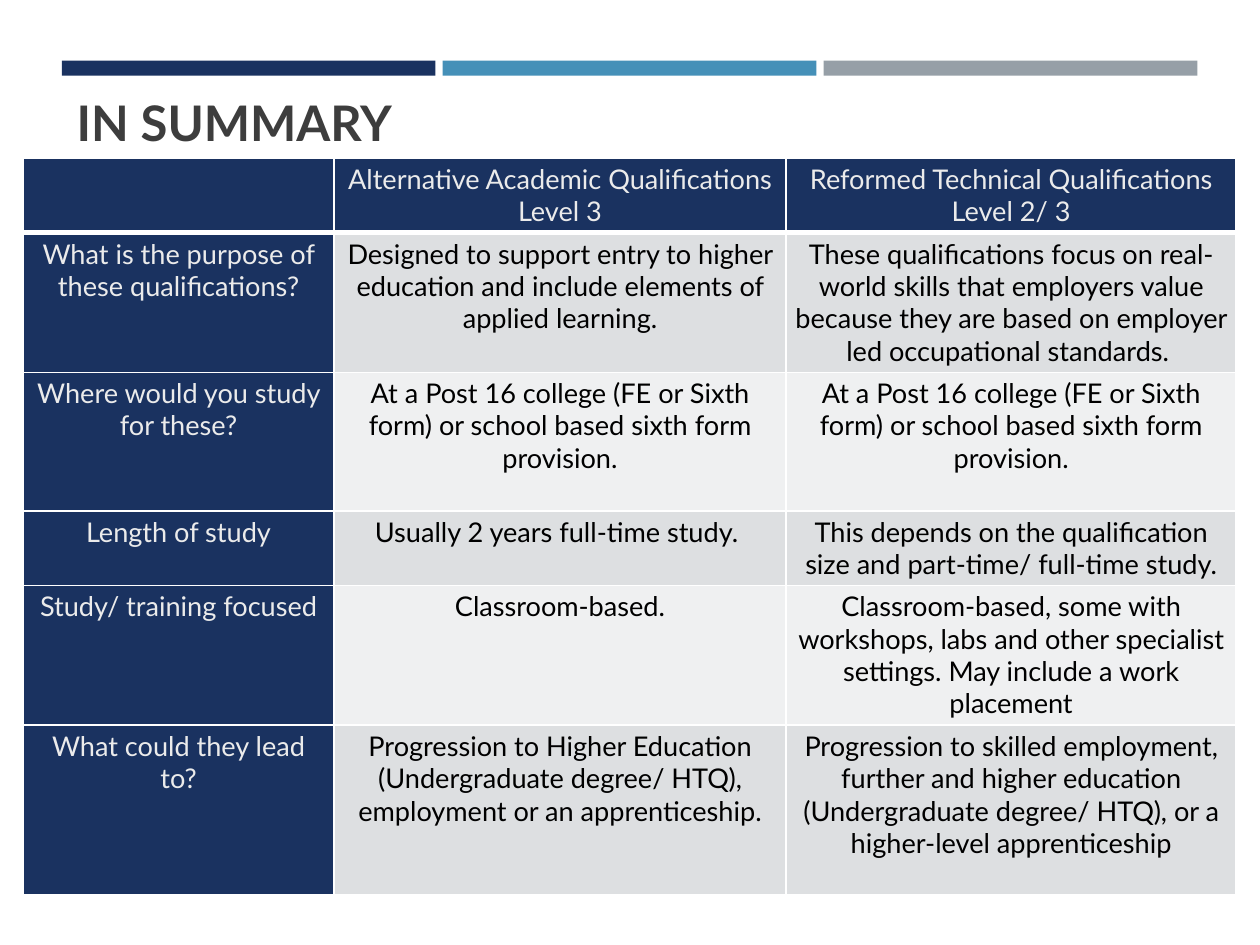
from dataclasses import dataclass

from pptx import Presentation
from pptx.dml.color import RGBColor
from pptx.enum.shapes import MSO_SHAPE as Shape
from pptx.enum.text import MSO_ANCHOR as Anchor, PP_ALIGN as Align
from pptx.oxml import parse_xml
from pptx.oxml.ns import nsdecls
from pptx.util import Pt

# Content
TITLE = "IN SUMMARY"
HEADER = [
    [],
    ["Alternative Academic Qualifications", "Level 3"],
    ["Reformed Technical Qualifications", "Level 2/ 3"],
]
COLLEGE = "At a Post 16 college (FE or Sixth form) or school based sixth form provision."
QUESTIONS = [
    ("What is the purpose of these qualifications?",
     "Designed to support entry to higher education and include elements of "
     "applied learning.",
     "These qualifications focus on real-world skills that employers value because "
     "they are based on employer led occupational standards. "),
    ("Where would you study for these?", COLLEGE, COLLEGE),
    ("Length of study",
     "Usually 2 years full-time study. ",
     "This depends on the qualification size and part-time/ full-time study."),
    ("Study/ training focused",
     "Classroom-based.",
     "Classroom-based, some with workshops, labs and other specialist settings. "
     "May include a work placement"),
    ("What could they lead to?",
     "Progression to Higher Education (Undergraduate degree/ HTQ), employment or "
     "an apprenticeship.",
     "Progression to skilled employment, further and higher education "
     "(Undergraduate degree/ HTQ), or a higher-level apprenticeship"),
]


@dataclass(frozen=True)
class Theme:
    font: str = "Lato"
    title_size: float = 28
    table_size: float = 15.5
    title: str = "3D3D3D"
    navy: str = "1A3260"
    blue: str = "4590B8"
    grey: str = "969FA7"
    light_text: str = "EBEBEB"
    dark_text: str = "000000"
    bands: tuple = ("DDDFE1", "EFF0F1")
    border: str = "FFFFFF"


THEME = Theme()

# Layout, in points
BAR_LEFT, BAR_TOP, BAR_WIDTH, BAR_HEIGHT, BAR_GAP = 35.3, 34.7, 213.6, 8.5, 4.1
TABLE_LEFT, TABLE_TOP = 13.2, 90.3
COLUMN_WIDTHS = [177.6, 258.4, 257.2]
ROW_HEIGHTS = [42.4, 79.4, 79.2, 42.4, 79.4, 97]


def add_run(paragraph, text, size, color, bold=False):
    run = paragraph.add_run()
    run.text = text
    run.font.name = THEME.font
    run.font.size = Pt(size)
    run.font.bold = bold
    run.font.color.rgb = RGBColor.from_string(color)


def set_borders(cell, widths):
    properties = cell._tc.get_or_add_tcPr()
    for position, (side, width) in enumerate(widths.items()):
        properties.insert(position, parse_xml(
            f'<a:{side} {nsdecls("a")} w="{Pt(width)}"><a:solidFill>'
            f'<a:srgbClr val="{THEME.border}"/></a:solidFill></a:{side}>'))


def fill_cell(cell, lines, fill, text_color, bottom_border):
    cell.fill.solid()
    cell.fill.fore_color.rgb = RGBColor.from_string(fill)
    cell.margin_left = cell.margin_right = Pt(5)
    cell.margin_top = cell.margin_bottom = Pt(2.7)
    for number, line in enumerate(lines):
        frame = cell.text_frame
        paragraph = frame.add_paragraph() if number else frame.paragraphs[0]
        paragraph.alignment = Align.CENTER
        add_run(paragraph, line, THEME.table_size, text_color)
    set_borders(cell, {"lnL": 1, "lnR": 1, "lnT": 1, "lnB": bottom_border})


def add_bars(slide):
    for number, color in enumerate((THEME.navy, THEME.blue, THEME.grey)):
        left = BAR_LEFT + number * (BAR_WIDTH + BAR_GAP)
        bar = slide.shapes.add_shape(Shape.RECTANGLE, Pt(left), Pt(BAR_TOP),
                                     Pt(BAR_WIDTH), Pt(BAR_HEIGHT))
        bar.shadow.inherit = False
        bar.fill.solid()
        bar.fill.fore_color.rgb = RGBColor.from_string(color)
        bar.line.fill.background()


def add_title(slide):
    box = slide.shapes.add_textbox(Pt(36.7), Pt(5), Pt(629.3), Pt(85))
    frame = box.text_frame
    frame.word_wrap = True
    frame.vertical_anchor = Anchor.BOTTOM
    add_run(frame.paragraphs[0], TITLE, THEME.title_size, THEME.title, bold=True)


def add_summary_table(slide):
    rows = [HEADER] + [[[text] for text in row] for row in QUESTIONS]
    table = slide.shapes.add_table(
        len(rows), len(COLUMN_WIDTHS), Pt(TABLE_LEFT), Pt(TABLE_TOP),
        Pt(sum(COLUMN_WIDTHS)), Pt(sum(ROW_HEIGHTS))).table
    for column, width in zip(table.columns, COLUMN_WIDTHS):
        column.width = Pt(width)
    for row, height in zip(table.rows, ROW_HEIGHTS):
        row.height = Pt(height)
    for row_number, row in enumerate(rows):
        for column_number, lines in enumerate(row):
            is_heading = row_number == 0 or column_number == 0
            fill = THEME.navy if is_heading else THEME.bands[(row_number - 1) % 2]
            text_color = THEME.light_text if is_heading else THEME.dark_text
            fill_cell(table.cell(row_number, column_number), lines, fill,
                      text_color, 1 if row_number else 3)


def main():
    presentation = Presentation()
    presentation.slide_width, presentation.slide_height = Pt(720), Pt(540)
    slide = presentation.slides.add_slide(presentation.slide_layouts[6])
    add_bars(slide)
    add_title(slide)
    add_summary_table(slide)
    presentation.save("out.pptx")


if __name__ == "__main__":
    main()
